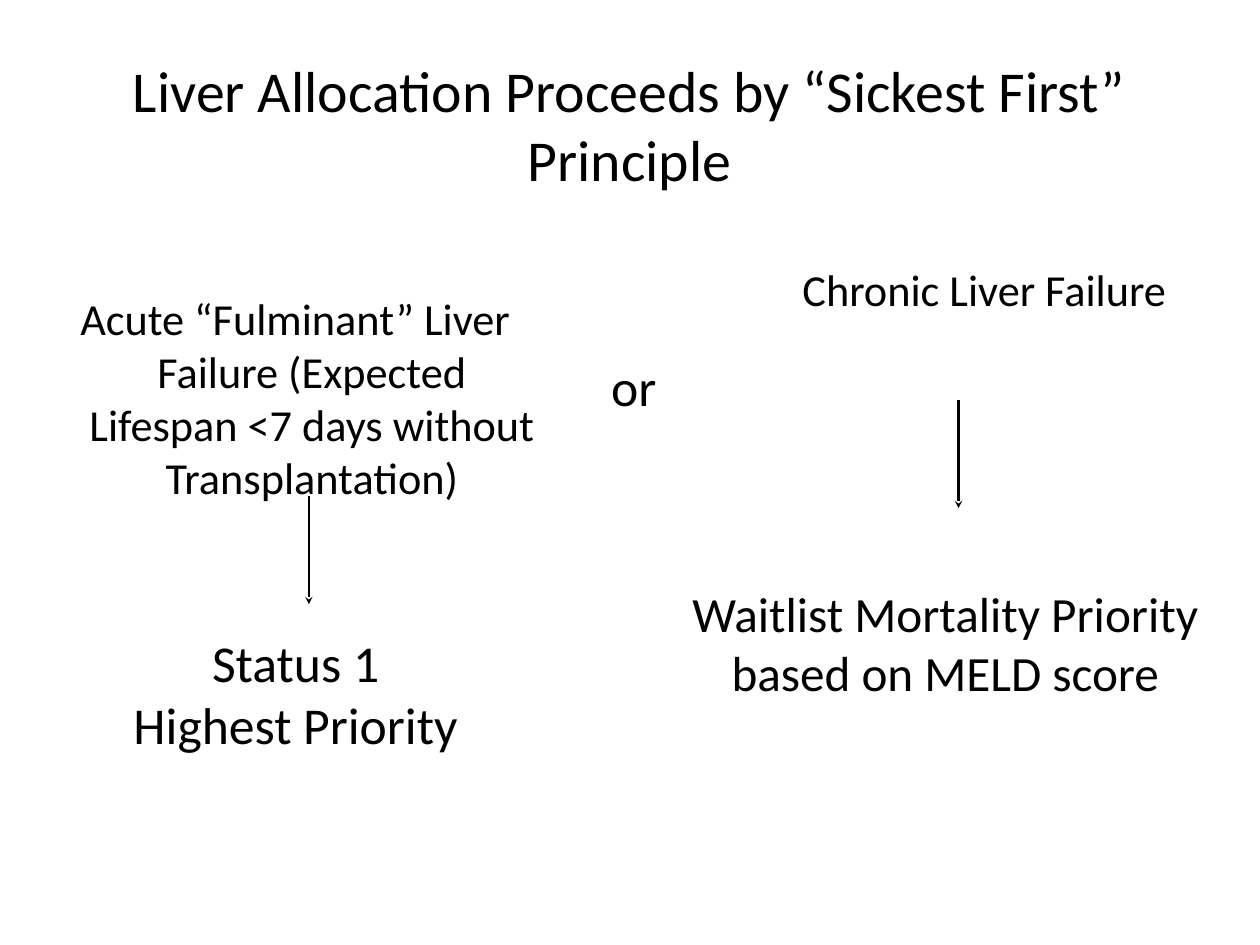
"""Builds a slide on how donor livers are allocated to the sickest patients first."""
from dataclasses import dataclass

import pptx
import pptx.dml.color
import pptx.enum.shapes
import pptx.enum.text
import pptx.oxml
import pptx.oxml.ns
import pptx.util

Pt = pptx.util.Pt


@dataclass(frozen=True)
class Theme:
    font: str = "Calibri"
    ink: str = "000000"
    paper: str = "FFFFFF"
    title: float = 47
    cause: float = 36
    priority: float = 40
    large: float = 42
    line: float = 2

    def color(self, name):
        return pptx.dml.color.RGBColor.from_string(getattr(self, name))


class SlideBuilder:
    def __init__(self, prs, theme):
        self.theme = theme
        self.s = prs.slides.add_slide(prs.slide_layouts[6])
        fill = self.s.background.fill
        fill.solid()
        fill.fore_color.rgb = theme.color("paper")

    def text(self, box, text, size, insets, margin=0, indent=0, wrap=True, anchor="TOP"):
        tf = self.s.shapes.add_textbox(*map(Pt, box)).text_frame
        tf.margin_left, tf.margin_top, tf.margin_right, tf.margin_bottom = map(Pt, insets)
        tf.word_wrap = wrap
        if not wrap:
            tf.auto_size = pptx.enum.text.MSO_AUTO_SIZE.SHAPE_TO_FIT_TEXT
        tf.vertical_anchor = getattr(pptx.enum.text.MSO_ANCHOR, anchor)
        tf.text = text
        for p in tf.paragraphs:
            p.alignment = pptx.enum.text.PP_ALIGN.CENTER
            pPr = p._p.get_or_add_pPr()
            pPr.set("marL", str(Pt(margin)))
            pPr.set("indent", str(Pt(indent)))
            for r in p.runs:
                r.font.name = self.theme.font
                r.font.size = Pt(size)
                r.font.color.rgb = self.theme.color("ink")

    def cause(self, box, text, inset):
        self.text(box, text, self.theme.cause, [inset] * 4, margin=27, indent=-27)

    def label(self, box, text, size):
        self.text(box, text, size, (0, 0, 3, 0), margin=3, wrap=False)

    def down_arrow(self, x, top, length):
        line = self.s.shapes.add_connector(
            pptx.enum.shapes.MSO_CONNECTOR.STRAIGHT, Pt(x), Pt(top + length), Pt(x), Pt(top))
        line.line.color.rgb = self.theme.color("ink")
        line.line.width = Pt(self.theme.line)
        ln = line.line._get_or_add_ln()
        head = pptx.oxml.parse_xml(f'<a:headEnd {pptx.oxml.ns.nsdecls("a")} type="stealth"/>')
        ln.append(head)
        spPr = line._element.spPr
        spPr.append(pptx.oxml.parse_xml(f'<a:effectLst {pptx.oxml.ns.nsdecls("a")}/>'))


def main():
    prs = pptx.Presentation()
    prs.slide_width, prs.slide_height = Pt(1024), Pt(768)
    theme = Theme()
    slide = SlideBuilder(prs, theme)

    slide.text((100, 38, 823.5, 123.5), "Liver Allocation Proceeds by “Sickest First” Principle",
               theme.title, [4.5] * 4, anchor="BOTTOM")
    slide.cause((34, 232, 412, 209),
                "Acute “Fulminant” Liver Failure (Expected Lifespan <7 days without Transplantation)", 4.5)
    slide.cause((620, 213, 360, 72), "Chronic Liver Failure", 0)
    slide.label((489, 288, 52, 57), "or", theme.large)
    slide.label((553, 474, 430.5, 100), "Waitlist Mortality Priority\nbased on MELD score", theme.priority)
    slide.label((99.5, 512.5, 281.5, 106), "Status 1\nHighest Priority", theme.large)
    for x, top in ((779, 325), (251, 403)):
        slide.down_arrow(x, top, 88)

    prs.save("out.pptx")


if __name__ == "__main__":
    main()
